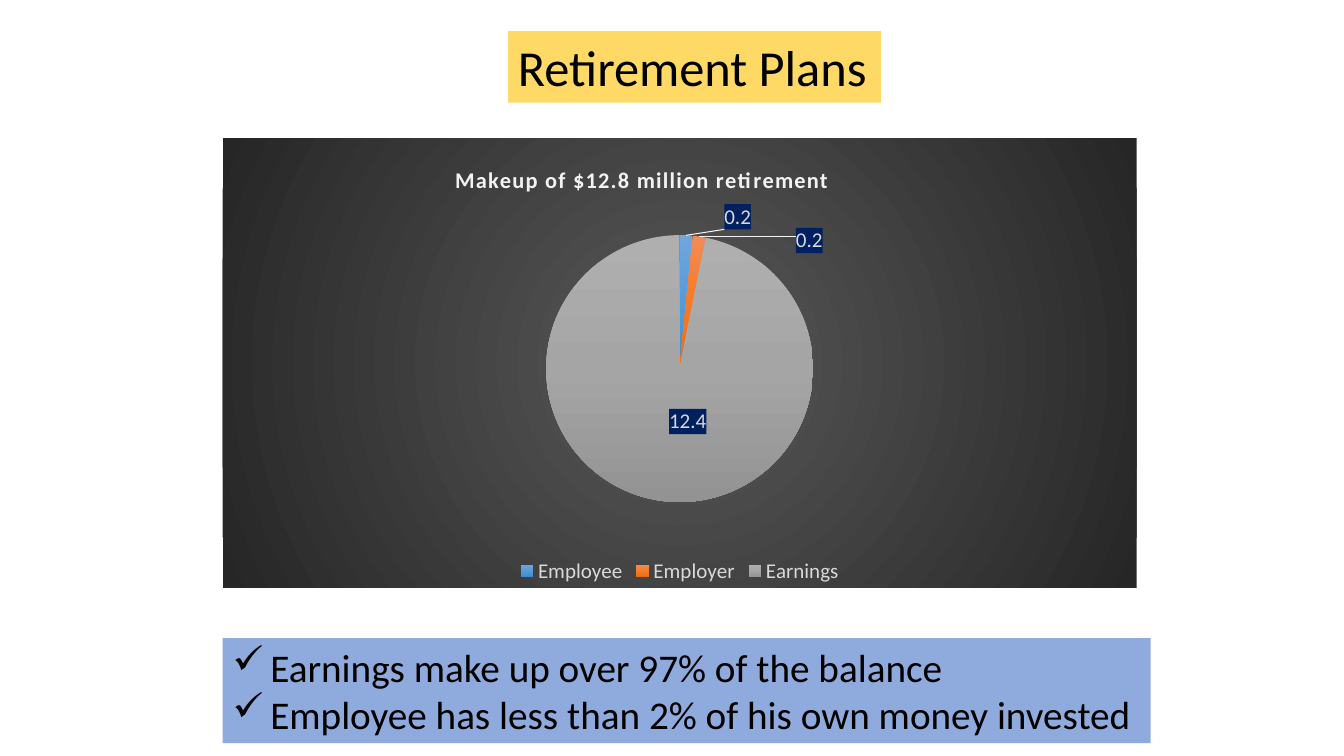
"""Build the retirement plans slide with its pie chart and takeaways."""
from pptx import Presentation
from pptx import util as u
from pptx.chart.data import CategoryChartData
from pptx.dml.color import RGBColor
from pptx.enum import chart as ch, shapes, text
from pptx.oxml import parse_xml
from pptx.oxml.ns import nsdecls, qn

FONT = "Calibri"
PALE = "D9D9D9"
HEAD = {"lines": ["Retirement Plans"], "at": (362.9, 22.3, 266.4, 51), "size": 36,
        "fill": "FFD966", "mark": None}
NOTES = {"lines": ["Earnings make up over 97% of the balance",
                   "Employee has less than 2% of his own money invested"],
         "at": (159, 455.8, 663, 75), "size": 28, "fill": "8FAADC", "mark": "✓"}
CHART = (159, 98.6, 653, 321.2)
TITLE = "Makeup of $12.8 million retirement"
BACK = ["595959", "262626"]
PIE = {"x": 0.354, "y": 0.216, "w": 0.292, "h": 0.594}
SLICES = [
    ("Employee", 0.2, ["71A6DB", "559BDB", "448ACA"], "outEnd", (0.056, 0)),
    ("Employer", 0.2, ["F18C57", "F67B28", "E56C19"], "outEnd", (0.105, 0.05)),
    ("Earnings", 12.4, ["AFAFAF", "A5A5A5", "939393"], "ctr", (0.016, -0.03)),
]


def paint(item, tone):
    """Give a fill or font a solid colour."""
    if hasattr(item, "solid"):
        item.solid()
        item.fore_color.rgb = RGBColor.from_string(tone)
    else:
        item.color.rgb = RGBColor.from_string(tone)


def style(font, size, tone, bold=False):
    """Set face, size, weight and colour."""
    font.name, font.size, font.bold = FONT, u.Pt(size), bold
    paint(font, tone)


def node(tag, body):
    """Make a chart element from its inner markup."""
    return parse_xml(f'<c:{tag} {nsdecls("c", "a")}>{body}</c:{tag}>')


def blend(tones, path):
    """Return markup for an even gradient."""
    step = 100000 // (len(tones) - 1)
    stops = "".join(f'<a:gs pos="{i * step}"><a:srgbClr val="{t}"/></a:gs>'
                    for i, t in enumerate(tones))
    return (f"<a:gradFill><a:gsLst>{stops}</a:gsLst>{path}</a:gradFill>"
            "<a:ln><a:noFill/></a:ln>")


def place(owner, index, spots, mode=""):
    """Fix the layout of a chart part."""
    for old in owner.findall(qn("c:layout")):
        owner.remove(old)
    edges = "".join(f'<c:{k}Mode val="edge"/>' for k in "xy")
    sizes = "".join(f'<c:{k} val="{v}"/>' for k, v in spots.items())
    owner.insert(index, node("layout", f"<c:manualLayout>{mode}{edges}{sizes}</c:manualLayout>"))


def add_box(slide, lines, at, size, fill, mark):
    """Add a filled text box, with hanging marks if asked."""
    box = slide.shapes.add_textbox(*map(u.Pt, at))
    paint(box.fill, fill)
    frame = box.text_frame
    frame.word_wrap = False
    frame.auto_size = text.MSO_AUTO_SIZE.SHAPE_TO_FIT_TEXT
    frame.text = "\n".join(lines)
    for para in frame.paragraphs:
        if mark:
            props = para._p.get_or_add_pPr()
            props.set("marL", str(u.Pt(27)))
            props.set("indent", str(-u.Pt(27)))
            props.append(parse_xml(f'<a:buChar {nsdecls("a")} char="{mark}"/>'))
        for run in para.runs:
            style(run.font, size, "000000")


def add_labels(series):
    """Colour the slices and add their value labels."""
    look = ('<c:numFmt formatCode="0.0" sourceLinked="0"/>'
            '<c:spPr><a:solidFill><a:srgbClr val="002060"/></a:solidFill></c:spPr>'
            '<c:txPr><a:bodyPr/><a:p><a:pPr><a:defRPr sz="1500" b="0"><a:solidFill>'
            f'<a:srgbClr val="{PALE}"/></a:solidFill><a:latin typeface="{FONT}"/>'
            '</a:defRPr></a:pPr><a:endParaRPr lang="en-US"/></a:p></c:txPr>')
    shows = "".join(f'<c:show{k} val="{int(k == "Val")}"/>' for k in
                    ("LegendKey", "Val", "CatName", "SerName", "Percent", "BubbleSize"))
    cats = series.find(qn("c:cat"))
    body = ""
    for i, (_, _, tones, spot, (x, y)) in enumerate(SLICES):
        shade = blend(tones, '<a:lin ang="5400000" scaled="0"/>')
        cats.addprevious(node("dPt", f'<c:idx val="{i}"/><c:bubble3D val="0"/>'
                                     f"<c:spPr>{shade}</c:spPr>"))
        body += (f'<c:dLbl><c:idx val="{i}"/><c:layout><c:manualLayout><c:x val="{x}"/>'
                 f'<c:y val="{y}"/></c:manualLayout></c:layout>{look}'
                 f'<c:dLblPos val="{spot}"/>{shows}</c:dLbl>')
    lead = ('<c:showLeaderLines val="1"/><c:leaderLines><c:spPr><a:ln w="9525"><a:solidFill>'
            '<a:srgbClr val="F2F2F2"/></a:solidFill></a:ln></c:spPr></c:leaderLines>')
    cats.addprevious(node("dLbls", body + look + shows + lead))


def add_pie(slide):
    """Add the pie chart on its dark ground."""
    data = CategoryChartData(number_format="0.0")
    data.categories = [s[0] for s in SLICES]
    data.add_series("Series 1", [s[1] for s in SLICES])
    chart = slide.shapes.add_chart(ch.XL_CHART_TYPE.PIE, *map(u.Pt, CHART), data).chart
    style(chart.font, 10, "000000")
    plot = chart.plots[0]
    plot.vary_by_categories = True
    add_labels(plot.series[0]._element)

    chart.has_title = True
    frame = chart.chart_title.text_frame
    frame.text = TITLE
    run = frame.paragraphs[0].runs[0]
    style(run.font, 16, "F2F2F2", True)
    run._r.get_or_add_rPr().set("spc", "100")
    place(chart.chart_title._element, 1, {"x": 0.25, "y": 0.05})

    chart.has_legend = True
    chart.legend.position = ch.XL_LEGEND_POSITION.BOTTOM
    chart.legend.include_in_layout = False
    style(chart.legend.font, 15, PALE)

    root = chart.element.find(qn("c:chart"))
    place(root.find(qn("c:plotArea")), 0, PIE, '<c:layoutTarget val="inner"/>')
    glow = ('<a:path path="circle"><a:fillToRect l="50000" t="50000" r="50000" b="50000"/>'
            "</a:path>")
    root.addnext(node("spPr", blend(BACK, glow)))


def main():
    """Make and save the slide."""
    deck = Presentation()
    deck.slide_width, deck.slide_height = u.Pt(960), u.Pt(540)
    slide = deck.slides.add_slide(deck.slide_layouts[6])
    for box in (HEAD, NOTES):
        add_box(slide, **box)
    add_pie(slide)
    deck.save("out.pptx")


if __name__ == "__main__":
    main()
